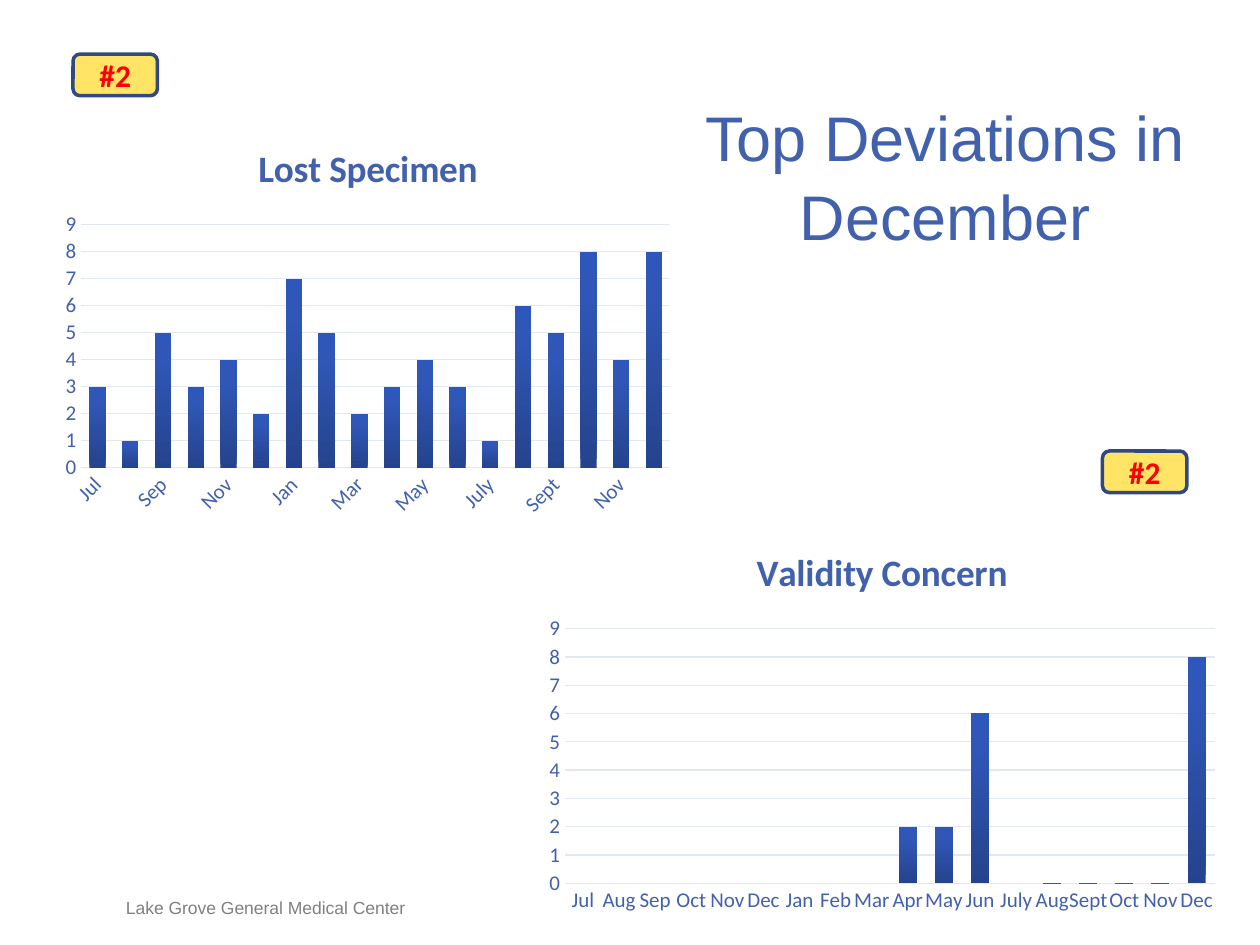
from lxml.etree import SubElement
from pptx import Presentation
from pptx.chart.data import CategoryChartData
from pptx.dml.color import RGBColor
from pptx.enum.chart import XL_CHART_TYPE, XL_TICK_MARK
from pptx.enum.shapes import MSO_SHAPE
from pptx.enum.text import MSO_ANCHOR, PP_ALIGN
from pptx.oxml.ns import qn
from pptx.util import Inches, Pt


class Theme:
    blue = RGBColor.from_string("4261AD")
    grid = RGBColor.from_string("E2E7F4")
    gray = RGBColor.from_string("808080")
    red = RGBColor.from_string("FF0000")
    yellow = RGBColor.from_string("FFE466")
    navy = RGBColor.from_string("314880")
    bar_stops = [(0, "25438D"), (80, "3057B7"), (100, "2E57BB")]
    heading, body = "Arial", "Calibri"
    title_size, chart_title_size, badge_size = Pt(36), Pt(21.3), Pt(18)
    axis_size, footer_size = Pt(12), Pt(10)


def write(tf, text, size, color, font=Theme.heading, bold=False,
          align=PP_ALIGN.LEFT, anchor=MSO_ANCHOR.TOP, margin=None, spacing=None):
    tf.word_wrap = True
    tf.vertical_anchor = anchor
    if margin is not None:
        tf.margin_left = tf.margin_right = tf.margin_top = tf.margin_bottom = margin
    p = tf.paragraphs[0]
    p.alignment = align
    p.line_spacing = spacing
    r = p.add_run()
    r.text = text
    r.font.name, r.font.size, r.font.bold = font, size, bold
    r.font.color.rgb = color


def fill_gradient(series, stops, angle):
    """Fill the bars with a gradient of any number of stops."""
    series.format.fill.gradient()
    grad = series.format._element.spPr.find(qn("a:gradFill")) if hasattr(
        series.format._element, "spPr") else series._element.spPr.find(qn("a:gradFill"))
    for child in list(grad):
        grad.remove(child)
    stop_list = SubElement(grad, qn("a:gsLst"))
    for percent, color in stops:
        stop = SubElement(stop_list, qn("a:gs"), pos=str(percent * 1000))
        SubElement(stop, qn("a:srgbClr"), val=color)
    SubElement(grad, qn("a:lin"), ang=str(angle * 60000), scaled="0")


prs = Presentation()
prs.slide_width, prs.slide_height = Inches(10), Inches(7.5)
s = prs.slides.add_slide(prs.slide_layouts[5])

# Title
title = s.shapes.title
title.left, title.top = Inches(5.5), Inches(0.75)
title.width, title.height = Inches(4), Inches(1.21)
write(title.text_frame, "Top Deviations in December", Theme.title_size, Theme.blue,
      align=PP_ALIGN.CENTER, margin=0, spacing=1.05)

# Footer
footer = s.shapes.add_textbox(Inches(1), Inches(7.12), Inches(3.17), Inches(0.17))
write(footer.text_frame, "Lake Grove General Medical Center", Theme.footer_size,
      Theme.gray, anchor=MSO_ANCHOR.BOTTOM, margin=0)

# Charts of monthly deviations
months = ["Jul", "Aug", "Sep", "Oct", "Nov", "Dec", "Jan", "Feb", "Mar",
          "Apr", "May", "Jun", "July", "Aug", "Sept", "Oct", "Nov", "Dec"]
deviations = [
    ("Lost Specimen", (0.42, 0.96, 5, 3.21),
     [3, 1, 5, 3, 4, 2, 7, 5, 2, 3, 4, 3, 1, 6, 5, 8, 4, 8]),
    ("Validity Concern", (4.25, 4.17, 5.5, 3.14),
     [None] * 9 + [2, 2, 6, None, 0, 0, 0, 0, 8]),
]
for name, box, counts in deviations:
    data = CategoryChartData()
    data.categories = months
    data.add_series(name, counts)
    chart = s.shapes.add_chart(XL_CHART_TYPE.COLUMN_CLUSTERED,
                               *(Inches(v) for v in box), data).chart
    chart.has_legend = False
    chart.font.name, chart.font.size = Theme.body, Theme.axis_size
    chart.font.color.rgb = Theme.blue
    chart.has_title = True
    write(chart.chart_title.text_frame, name, Theme.chart_title_size, Theme.blue,
          font=Theme.body, bold=True, align=PP_ALIGN.CENTER)

    plot = chart.plots[0]
    plot.vary_by_categories = False
    plot.gap_width, plot.overlap = 100, -24
    fill_gradient(plot.series[0], Theme.bar_stops, 270)

    months_axis, count_axis = chart.category_axis, chart.value_axis
    for axis in (months_axis, count_axis):
        axis.major_tick_mark = axis.minor_tick_mark = XL_TICK_MARK.NONE
    count_axis.minimum_scale, count_axis.maximum_scale = 0, 9
    count_axis.major_unit = 1
    count_axis.format.line.fill.background()
    for line in (months_axis.format.line, count_axis.major_gridlines.format.line):
        line.color.rgb, line.width = Theme.grid, Pt(0.75)

# Rank badges
for left, top in [(0.58, 0.43), (8.75, 3.58)]:
    badge = s.shapes.add_shape(MSO_SHAPE.ROUNDED_RECTANGLE, Inches(left), Inches(top),
                               Inches(0.67), Inches(0.33))
    badge.shadow.inherit = False
    badge.fill.solid()
    badge.fill.fore_color.rgb = Theme.yellow
    badge.line.color.rgb, badge.line.width = Theme.navy, Pt(2)
    write(badge.text_frame, "#2", Theme.badge_size, Theme.red, font=Theme.body,
          bold=True, align=PP_ALIGN.CENTER, anchor=MSO_ANCHOR.MIDDLE)

prs.save("out.pptx")
